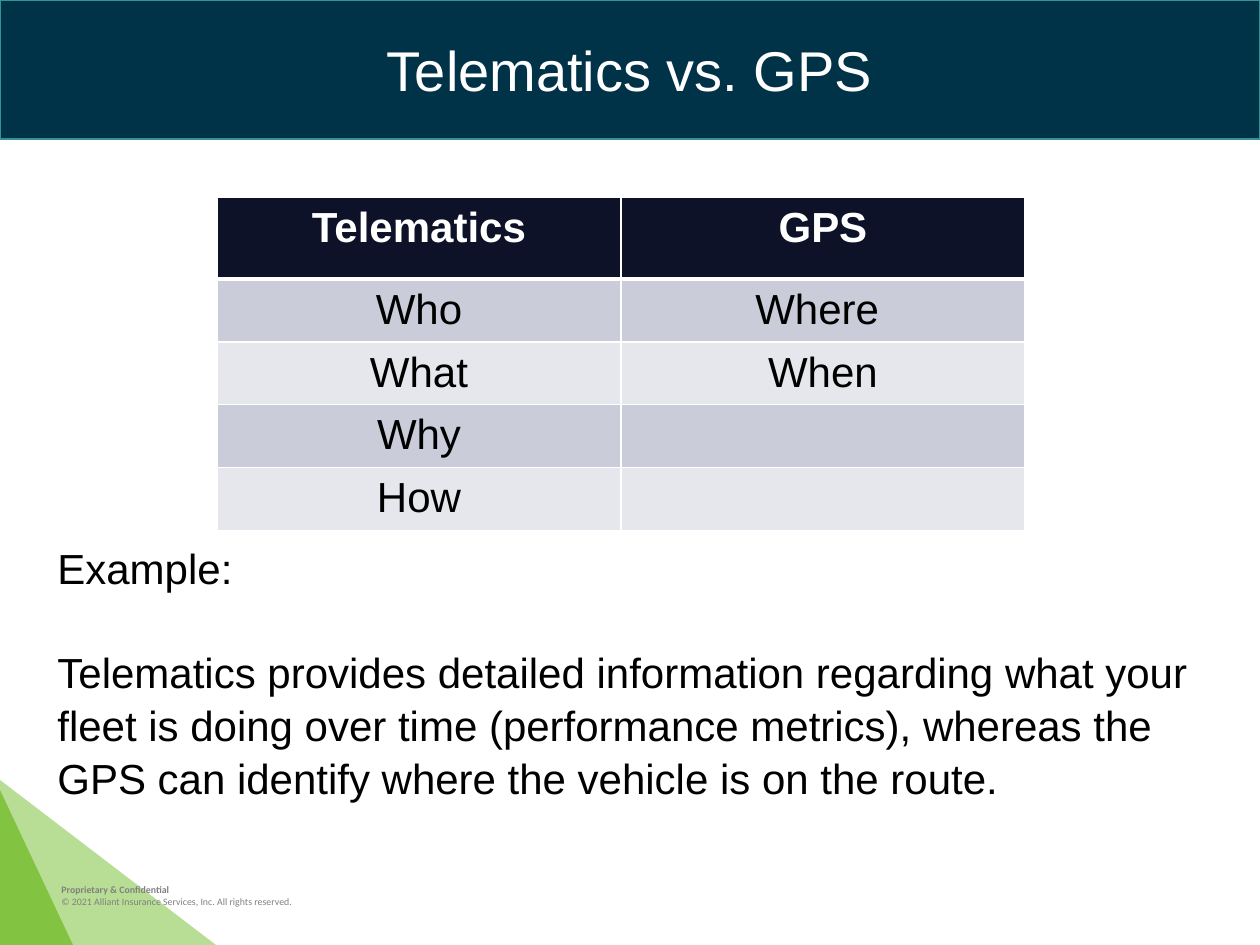
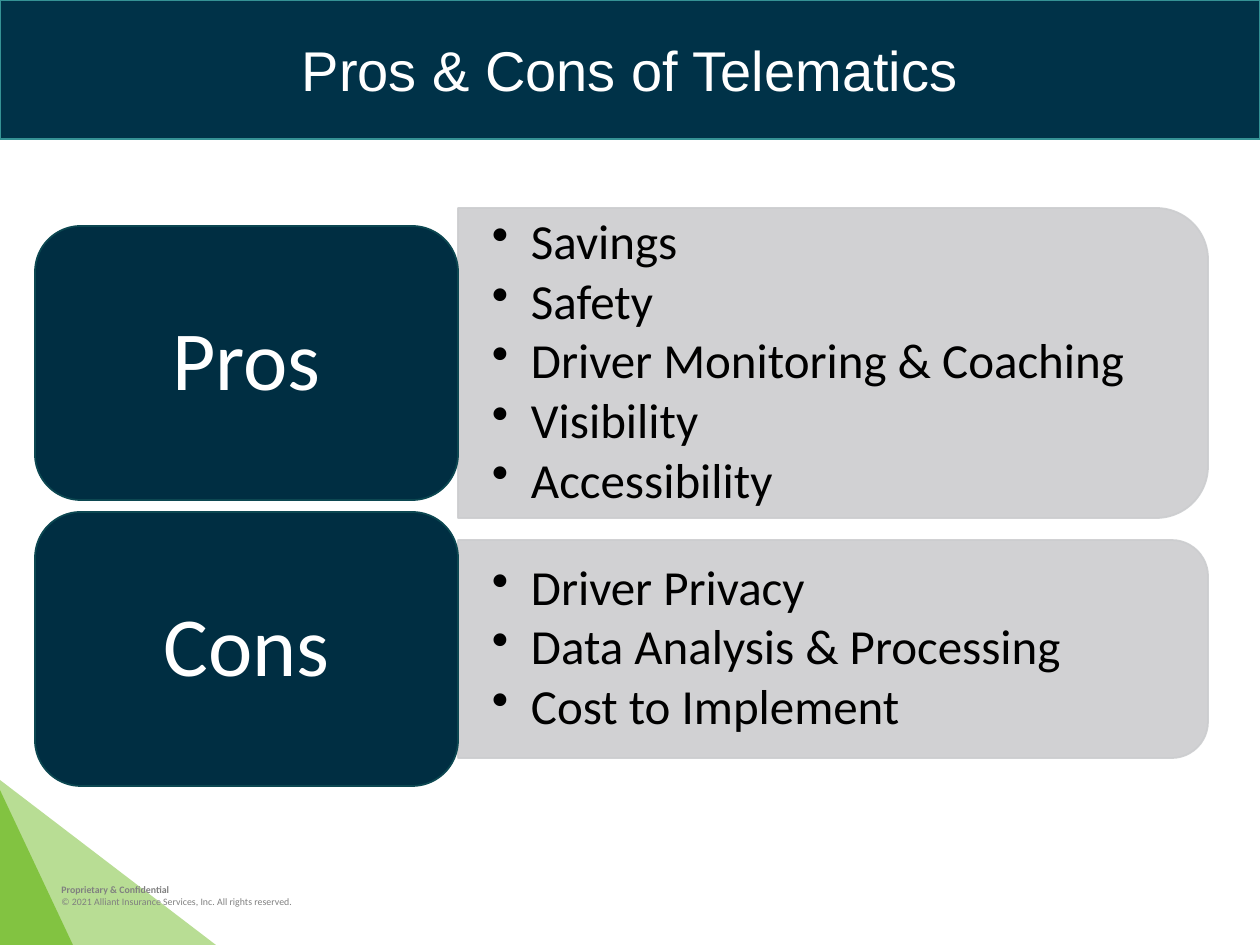
from pptx import Presentation
from pptx.dml.color import RGBColor
from pptx.enum.shapes import MSO_SHAPE
from pptx.enum.text import MSO_ANCHOR, PP_ALIGN
from pptx.oxml.ns import qn
from pptx.util import Pt
from lxml import etree

RECT, ROUND = MSO_SHAPE.RECTANGLE, MSO_SHAPE.ROUNDED_RECTANGLE
TAB, WEDGE = MSO_SHAPE.ROUND_2_SAME_RECTANGLE, MSO_SHAPE.RIGHT_TRIANGLE
TOP, MIDDLE = MSO_ANCHOR.TOP, MSO_ANCHOR.MIDDLE
LEFT, CENTER = PP_ALIGN.LEFT, PP_ALIGN.CENTER

WIDE, HIGH = 1260, 945
WHITE, BLACK, GRAY = "FFFFFF", "000000", "808080"
NAVY, TEAL, GREEN = "003248", "359295", "82C341"
LABEL, RIM, SILVER = "002E42", "0C4751", "CCCDCF"
HEAD, BANDS = "0D1229", ("CACCD9", "E6E7ED")
SANS, BODY = "Arial", "Calibri"


def px(n):
    """Turn px into EMU."""
    return round(n * 914400 / 126)


def rgb(code):
    """Turn a hex string into a colour."""
    return RGBColor.from_string(code)


class Deck:
    """Holds the style, the file and the current slide."""

    def __init__(self):
        """Open an empty file of the right size."""
        self.file = Presentation()
        self.file.slide_width, self.file.slide_height = px(WIDE), px(HIGH)

    def page(self, title):
        """Start a slide with its corner, footer and title band."""
        self.slide = self.file.slides.add_slide(self.file.slide_layouts[6])
        self.shape(WEDGE, (0, 780, 216, 165), GREEN, alpha=56)
        self.shape(WEDGE, (0, 790, 73, 155), GREEN)
        notes = ["Proprietary & Confidential",
                 "© 2021 Alliant Insurance Services, Inc. All rights reserved."]
        foot = self.text((49, 878, 382, 37), notes, 5.6, GRAY, BODY)
        foot.paragraphs[0].font.bold = True
        band = self.shape(RECT, (0, 0, WIDE, 139), NAVY, TEAL)
        self.fill(band.text_frame, [title], 32, WHITE, SANS, CENTER, MIDDLE)

    def shape(self, kind, box, fill, line=None, alpha=100, turn=0):
        """Add a preset shape, with a box given as it looks once turned."""
        x, y, w, h = box
        if turn:
            x, y, w, h = x + (w - h) / 2, y + (h - w) / 2, h, w
        item = self.slide.shapes.add_shape(kind, *map(px, (x, y, w, h)))
        item.shadow.inherit = False
        item.rotation = turn
        item.fill.solid()
        item.fill.fore_color.rgb = rgb(fill)
        if line:
            item.line.color.rgb = rgb(line)
            item.line.width = Pt(1)
        else:
            item.line.fill.background()
        if alpha < 100:
            for tint in item._element.spPr.iter(qn("a:srgbClr")):
                etree.SubElement(tint, qn("a:alpha"), val=str(alpha * 1000))
        return item

    def text(self, box, lines, size, color, font, anchor=TOP):
        """Add a text box and return its frame."""
        frame = self.slide.shapes.add_textbox(*map(px, box)).text_frame
        self.fill(frame, lines, size, color, font, LEFT, anchor)
        return frame

    def fill(self, frame, lines, size, color, font, align, anchor):
        """Fill a frame with one paragraph per line."""
        frame.word_wrap = True
        frame.vertical_anchor = anchor
        for i, line in enumerate(lines):
            para = frame.add_paragraph() if i else frame.paragraphs[0]
            para.text, para.alignment = line, align
            self.style(para, size, color, font)

    def style(self, para, size, color, font):
        """Set the font of a paragraph."""
        para.font.size, para.font.name = Pt(size), font
        para.font.color.rgb = rgb(color)

    def bullets(self, box, lines):
        """Add a bullet list centred in the height of its box."""
        frame = self.text(box, lines, 28, BLACK, BODY, MIDDLE)
        frame.margin_left = px(34)
        frame.margin_top = frame.margin_bottom = 0
        for para in frame.paragraphs:
            prop = para._p.get_or_add_pPr()
            prop.set("marL", str(px(39)))
            prop.set("indent", str(-px(39)))
            para.line_spacing, para.space_after = 0.9, Pt(3.8)
            mark = etree.Element(qn("a:buChar"), char="•")
            prop.find(qn("a:spcAft")).addnext(mark)

    def group(self, name, top, tab, lines):
        """Add a label with a tab of bullets at its right."""
        self.shape(TAB, tab, SILVER, SILVER, 90, 90)
        self.bullets(tab, lines)
        label = self.shape(ROUND, (35, top, 423, 274), LABEL, RIM)
        self.fill(label.text_frame, [name], 48, WHITE, BODY, CENTER, MIDDLE)
        label.text_frame.paragraphs[0].line_spacing = 0.9

    def edge(self, cell, side, width):
        """Draw one white border of a cell."""
        line = etree.SubElement(cell._tc.get_or_add_tcPr(), qn("a:ln" + side),
                                w=str(Pt(width)))
        fill = etree.SubElement(line, qn("a:solidFill"))
        etree.SubElement(fill, qn("a:srgbClr"), val=WHITE)

    def table(self, box, rows, highs):
        """Add a table with a dark head and banded rows."""
        grid = self.slide.shapes.add_table(
            len(rows), len(rows[0]), *map(px, box)).table
        grid.first_row = grid.horz_banding = False
        for r, row in enumerate(rows):
            grid.rows[r].height = px(highs[r])
            for c, word in enumerate(row):
                cell = grid.cell(r, c)
                cell.margin_left = cell.margin_right = px(10)
                cell.margin_top = cell.margin_bottom = px(5)
                for side in "LRTB":
                    thick = (r, side) in ((0, "B"), (1, "T"))
                    self.edge(cell, side, 3 if thick else 1)
                cell.fill.solid()
                cell.fill.fore_color.rgb = rgb(BANDS[(r - 1) % 2] if r else HEAD)
                para = cell.text_frame.paragraphs[0]
                para.text, para.alignment = word, CENTER
                self.style(para, 24, BLACK if r else WHITE, SANS)
                para.font.bold = r == 0
                para.line_spacing = 1.05


def main():
    """Build both slides."""
    deck = Deck()
    deck.page("Telematics vs. GPS")
    case = deck.text((45, 534, 1155, 267), [
        "Example:",
        "Telematics provides detailed information regarding what your fleet is "
        "doing over time (performance metrics), whereas the GPS can identify "
        "where the vehicle is on the route."], 24, BLACK, SANS)
    for para in case.paragraphs:
        para.line_spacing = 1.05
    case.paragraphs[1].space_before = Pt(29)
    deck.table((217, 197, 808, 322), [
        ("Telematics", "GPS"), ("Who", "Where "), ("What", "When"),
        ("Why", ""), ("How", "")], [82] + [60] * 4)

    deck.page("Pros & Cons of Telematics")
    deck.group("Pros", 226, (458, 208, 750, 310), [
        "Savings", "Safety", "Driver Monitoring & Coaching", "Visibility",
        "Accessibility"])
    deck.group("Cons", 512, (458, 540, 750, 218), [
        "Driver Privacy", "Data Analysis & Processing", "Cost to Implement"])
    deck.file.save("out.pptx")


if __name__ == "__main__":
    main()
